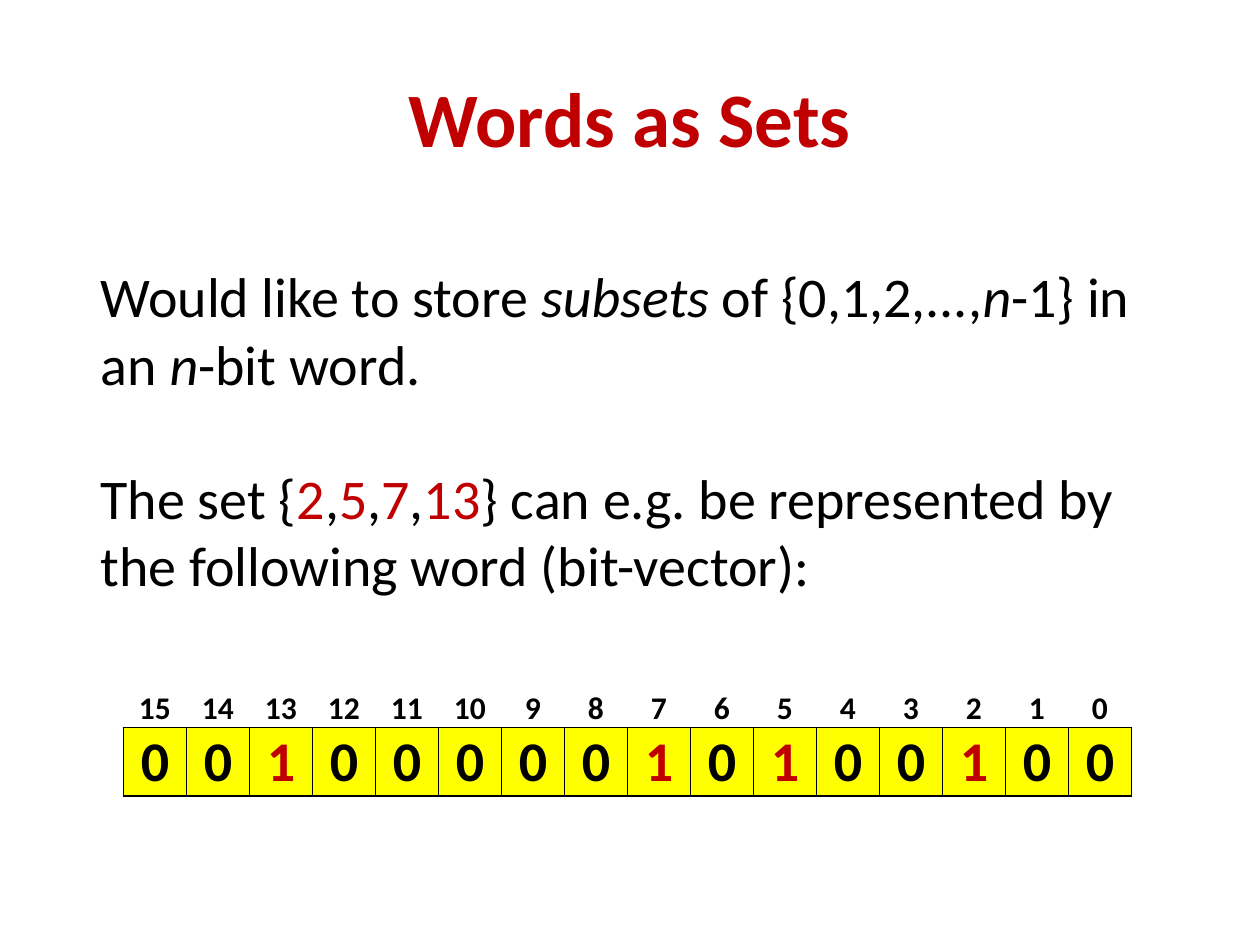
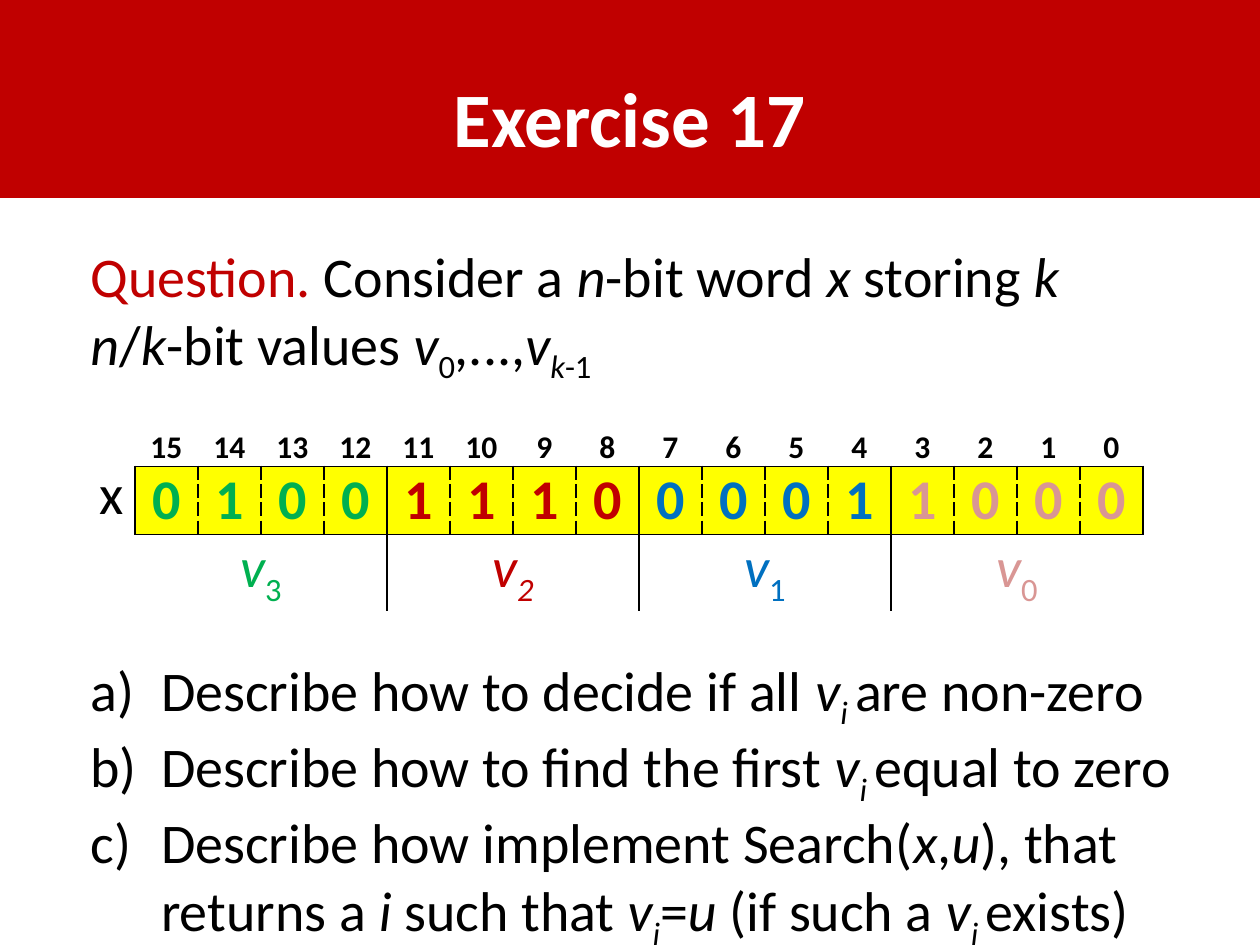
import dataclasses

import pptx
import pptx.dml.color
import pptx.enum.shapes
import pptx.enum.text
import pptx.oxml
import pptx.oxml.ns
import pptx.util

FONT = "Calibri"
BLACK, WHITE, RED, YELLOW = "000000", "FFFFFF", "C00000", "FFFF00"
GREEN, BLUE, PINK = "00B050", "0070C0", "D99694"
TITLE, BODY, SMALL = 44, 32, 18
COLS, ROWS = 20, 15
CELL = pptx.util.Inches(0.5)
LINE = 38.5
LEFT = pptx.enum.text.PP_ALIGN.LEFT
CENTER = pptx.enum.text.PP_ALIGN.CENTER
RIGHT = pptx.enum.text.PP_ALIGN.RIGHT
MIDDLE = pptx.enum.text.MSO_ANCHOR.MIDDLE
NO_STYLE = "{2D5ABB26-0587-4C30-8999-92F81FD0307C}"


@dataclasses.dataclass
class Box:
    """A place on the grid, in columns and rows."""
    col: float
    row: float
    wide: float
    high: float

    def place(self) -> list[int]:
        return [grid(n) for n in (self.col, self.row, self.wide, self.high)]


@dataclasses.dataclass
class Run:
    text: str
    tint: str = ""
    slant: bool = False
    sub: bool = False


@dataclasses.dataclass
class Para:
    runs: list[Run]
    gap: float = 0
    inset: float = 0
    listed: bool = False
    align: int = LEFT


@dataclasses.dataclass
class Word:
    """A bit word: its fields are the groups of bits between solid lines."""
    bits: str
    tints: list[str]
    group: int = 1
    names: list[list[Run]] = dataclasses.field(default_factory=list)


def grid(count: float) -> int:
    return round(count * CELL)


def tint(code: str) -> pptx.dml.color.RGBColor:
    return pptx.dml.color.RGBColor.from_string(code)


def slant(text: str) -> Run:
    return Run(text, slant=True)


def sub(text: str, lean: bool = True) -> Run:
    return Run(text, slant=lean, sub=True)


def style(para, size: float, code: str = BLACK, bold: bool = False, align: int = LEFT) -> None:
    para.alignment = align
    para.font.name = FONT
    para.font.size = pptx.util.Pt(size)
    para.font.bold = bold
    para.font.color.rgb = tint(code)


def add_runs(para, runs: list[Run]) -> None:
    for part in runs:
        run = para.add_run()
        run.text = part.text
        if part.slant:
            run.font.italic = True
        if part.tint:
            run.font.color.rgb = tint(part.tint)
        if part.sub:
            run.font._element.set("baseline", "-25000")


def indent(para, inset: float, listed: bool) -> None:
    """Indent by grid columns, with a hanging letter if listed."""
    props = para._p.get_or_add_pPr()
    props.set("marL", str(grid(inset)))
    props.set("indent", str(-grid(inset) if listed else 0))
    if listed:
        mark = pptx.oxml.parse_xml(
            f'<a:buAutoNum {pptx.oxml.ns.nsdecls("a")} type="alphaLcParenR"/>')
        props.find(pptx.oxml.ns.qn("a:defRPr")).addprevious(mark)


def add_text(slide, box: Box, paras: list[Para]) -> None:
    frame = slide.shapes.add_textbox(*box.place()).text_frame
    frame.word_wrap = True
    for num, item in enumerate(paras):
        para = frame.add_paragraph() if num else frame.paragraphs[0]
        style(para, BODY, align=item.align)
        if item.gap:
            para.space_before = pptx.util.Pt(item.gap)
        if item.inset:
            indent(para, item.inset, item.listed)
        add_runs(para, item.runs)


def add_slide(deck, text: str, band: bool = False):
    slide = deck.slides.add_slide(deck.slide_layouts[5])
    title = slide.shapes.title
    title.left, title.top, title.width, title.height = Box(1, 0.6, 18, 2.5).place()
    title.text_frame.text = text
    title.text_frame.vertical_anchor = MIDDLE
    style(title.text_frame.paragraphs[0], TITLE, WHITE if band else RED, True, CENTER)
    if band:
        shape = slide.shapes.add_shape(
            pptx.enum.shapes.MSO_SHAPE.RECTANGLE, *Box(0, 0, COLS, 3.12).place())
        shape.shadow.inherit = False
        shape.fill.solid()
        shape.fill.fore_color.rgb = shape.line.color.rgb = tint(RED)
        shape.line.width = pptx.util.Pt(2)
        title.element.addprevious(shape.element)
    return slide


def edge(cell, sides: dict[str, str]) -> None:
    """Draw cell borders, as pairs of side (L, R, T, B) and dash."""
    props = cell._tc.get_or_add_tcPr()
    for side in "LRTB":
        if side in sides:
            props.append(pptx.oxml.parse_xml(
                f'<a:ln{side} {pptx.oxml.ns.nsdecls("a")} w="12700"><a:solidFill>'
                f'<a:srgbClr val="{BLACK}"/></a:solidFill>'
                f'<a:prstDash val="{sides[side]}"/></a:ln{side}>'))


def fill_cell(cell, runs: list[Run], size: float, code: str = BLACK, bold: bool = True,
              back: str = "", sides: dict[str, str] | None = None) -> None:
    cell.margin_top = cell.margin_bottom = 0
    cell.vertical_anchor = MIDDLE
    edge(cell, sides or {})
    if back:
        cell.fill.solid()
        cell.fill.fore_color.rgb = tint(back)
    else:
        cell.fill.background()
    para = cell.text_frame.paragraphs[0]
    style(para, size, code, bold, CENTER)
    add_runs(para, runs)


def add_word(slide, col: float, row: float, word: Word) -> None:
    count = len(word.bits)
    highs = [0.6, 1.08] + ([1.2] if word.names else [])
    frame = slide.shapes.add_table(
        len(highs), count, *Box(col, row, count, sum(highs)).place())
    table = frame.table
    table.first_row = table.horz_banding = False
    table._tbl.tblPr.find(pptx.oxml.ns.qn("a:tableStyleId")).text = NO_STYLE
    for line, high in zip(table.rows, highs):
        line.height = grid(high)
    for num, bit in enumerate(word.bits):
        table.columns[num].width = grid(1)
        fill_cell(table.cell(0, num), [Run(str(count - 1 - num))], SMALL,
                  sides={"B": "solid"})
        left, right = ("dash" if n % word.group else "solid" for n in (num, num + 1))
        fill_cell(table.cell(1, num), [Run(bit)], BODY, word.tints[num], back=YELLOW,
                  sides={"L": left, "R": right, "T": "solid", "B": "solid"})
    for num, runs in enumerate(word.names):
        first = num * word.group
        last = first + word.group - 1
        cell = table.cell(2, first)
        cell.merge(table.cell(2, last))
        sides = {"T": "solid"}
        if first > 0:
            sides["L"] = "solid"
        if last < count - 1:
            sides["R"] = "solid"
        fill_cell(cell, runs, BODY, word.tints[first], False, sides=sides)
        for rest in range(first + 1, last + 1):
            edge(table.cell(2, rest), {"T": "solid"} | (
                {"R": "solid"} if rest == last < count - 1 else {}))


def draw_sets(deck) -> None:
    slide = add_slide(deck, "Words as Sets")
    bits = "0010000010100100"
    add_word(slide, 1.96, 10.94, Word(bits, [RED if b == "1" else BLACK for b in bits]))
    add_text(slide, Box(1.4, 4.06, 17.04, 5.58), [
        Para([Run("Would like to store "), slant("subsets "), Run("of {0,1,2,...,"),
              slant("n"), Run("-1} in an "), slant("n"), Run("-bit word.")]),
        Para([Run("The set {"), Run("2", RED), Run(","), Run("5", RED), Run(","),
              Run("7", RED), Run(","), Run("13", RED),
              Run("} can e.g. be represented by")], gap=LINE),
        Para([Run("the following word (bit-vector):")]),
    ])


def draw_task(deck) -> None:
    slide = add_slide(deck, "Exercise 17", band=True)
    inset = 1.12
    value = [slant("v"), sub("i ")]
    add_text(slide, Box(1.24, 3.74, 18.28, 11.26), [
        Para([Run("Question. ", RED), Run("Consider a "), slant("n"), Run("-bit word "),
              slant("x "), Run("storing "), slant("k")]),
        Para([slant("n"), Run("/"), slant("k"), Run("-bit values "), slant("v"),
              sub("0", False), Run(",...,"), slant("v"), sub("k"), sub("-1", False)]),
        Para([Run("Describe how to decide if all "), *value, Run("are non-zero")],
             4 * LINE, inset, True),
        Para([Run("Describe how to find the first "), *value, Run("equal to zero")],
             0, inset, True),
        Para([Run("Describe how implement Search("), slant("x"), Run(","), slant("u"),
              Run("), that")], 0, inset, True),
        Para([Run("returns a "), slant("i "), Run("such that "), slant("v"), sub("i"),
              Run("="), slant("u"), Run(" (if such a "), *value, Run("exists)")],
             0, inset),
    ])
    group = 4
    tints = [code for code in (GREEN, RED, BLUE, PINK) for _ in range(group)]
    names = [[slant("v"), sub(num, num == "2")] for num in "3210"]
    add_word(slide, 2.14, 6.8, Word("0100111000011000", tints, group, names))
    add_text(slide, Box(0.9, 7.18, 1.26, 1.28), [Para([Run("x")], align=RIGHT)])


def main() -> None:
    deck = pptx.Presentation()
    deck.slide_width, deck.slide_height = grid(COLS), grid(ROWS)
    draw_sets(deck)
    draw_task(deck)
    deck.save("out.pptx")


if __name__ == "__main__":
    main()
